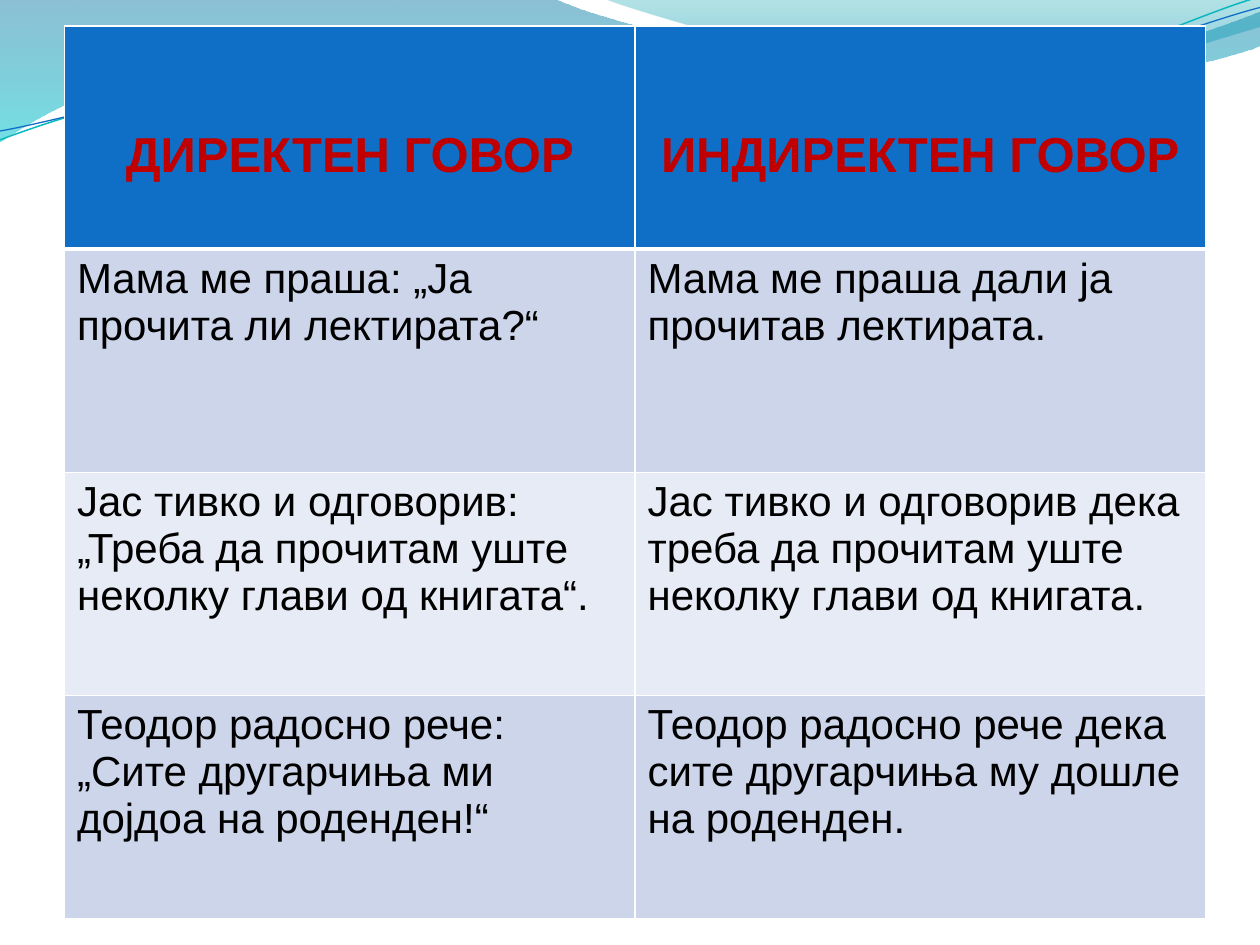
import math

import pptx
import pptx.dml.color
import pptx.enum.text
import pptx.oxml
import pptx.oxml.ns
import pptx.util
from lxml import etree

Cm = pptx.util.Cm
Pt = pptx.util.Pt
qn = pptx.oxml.ns.qn

COLORS = {
    "header": "0F6FC6",
    "header_text": "C00000",
    "text": "000000",
    "odd_row": "CCD5EA",
    "even_row": "E7EBF5",
    "border": "FFFFFF",
    "deep_blue": "0074A1",
    "cyan": "00C6CF",
    "teal": "00A1A9",
    "blue": "008BBF",
    "teal_line": "0AB8BF",
}
FONT = "Arial"
CM_PER_INCH = 2.54
LINE_TILT = -2.7

ROWS = [
    ("ДИРЕКТЕН ГОВОР", "ИНДИРЕКТЕН ГОВОР"),
    ("Мама ме праша: „Ја прочита ли лектирата?“",
     "Мама ме праша дали ја прочитав лектирата."),
    ("Јас тивко и одговорив: „Треба да прочитам уште неколку глави од книгата“.",
     "Јас тивко и одговорив дека треба да прочитам уште неколку глави од книгата."),
    ("Теодор радосно рече: „Сите другарчиња ми дојдоа на роденден!“",
     "Теодор радосно рече дека сите другарчиња му дошле на роденден."),
]

# Outlines in inches: a pair is a straight step, a sextet a Bézier curve.
# Gradient stops: position in percent, colour, opacity in percent.
WAVES = [
    ([(0, 0), (4.4, -0.01), (4.76, 0.17, 6.64, 0.63, 7.58, 0.63),
      (8.53, 0.63, 9.58, 0.26, 10, 0.09), (10.01, 0.36),
      (9.83, 0.44, 8.7, 0.76, 7.46, 0.75), (6.22, 0.75, 3.82, 0.28, 2.57, 0.34),
      (1.29, 0.36, 0.46, 0.83, -0.01, 1.13), (0, 0)],
     [(0, "deep_blue", 45), (100, "cyan", 55)]),
    ([(4.79, -0.01), (5.09, 0.11, 6.82, 0.62, 7.69, 0.65),
      (8.56, 0.69, 9.61, 0.32, 10, 0.21), (10, 0), (4.79, -0.01)],
     [(0, "teal", 30), (80, "blue", 45)]),
]
# Outline, centre of rotation, colour, width.
WAVE_LINES = [
    ([(0, 1.11), (0.48, 0.93, 1.58, 0.57, 2.77, 0.52),
      (3.95, 0.47, 5.93, 0.89, 7.13, 0.8), (8.33, 0.71, 9.38, 0.15, 9.98, -0.02)],
     (4.99, 0.57), "teal_line", 0.85),
    ([(0, 1.04), (0.47, 0.96, 1.64, 0.61, 2.83, 0.56),
      (4.03, 0.51, 5.97, 0.84, 7.17, 0.75), (8.36, 0.67, 9.41, 0.21, 10, 0.06)],
     (5, 0.59), "header", 0.75),
]


def rgb(name):
    return pptx.dml.color.RGBColor.from_string(COLORS[name])


def turn(outline, center, degrees):
    """Rotate every point of an outline clockwise about the centre."""
    cosine, sine = math.cos(math.radians(degrees)), math.sin(math.radians(degrees))
    turned = []
    for step in outline:
        values = []
        for x, y in zip(step[::2], step[1::2]):
            dx, dy = x - center[0], y - center[1]
            values += [center[0] + dx * cosine - dy * sine,
                       center[1] + dx * sine + dy * cosine]
        turned.append(tuple(values))
    return turned


def add_outline(slide, outline, close):
    """Draw all points as straight steps, then join each curve's three into one."""
    points = [(Cm(x * CM_PER_INCH), Cm(y * CM_PER_INCH))
              for step in outline for x, y in zip(step[::2], step[1::2])]
    builder = slide.shapes.build_freeform(*points[0])
    builder.add_line_segments(points[1:], close=close)
    shape = builder.convert_to_shape()
    shape.shadow.inherit = False
    segments = iter(list(shape.element.iter(qn("a:lnTo"))))
    for step in outline[1:]:
        segment = next(segments)
        if len(step) == 6:
            curve = etree.Element(qn("a:cubicBezTo"))
            segment.addprevious(curve)
            for part in (segment, next(segments), next(segments)):
                curve.append(part[0])
                part.getparent().remove(part)
    return shape


def add_wave(slide, outline, stops):
    shape = add_outline(slide, outline, close=True)
    shape.line.fill.background()
    stop_xml = "".join(
        f'<a:gs pos="{position * 1000}"><a:srgbClr val="{COLORS[color]}">'
        f'<a:alpha val="{opacity * 1000}"/></a:srgbClr></a:gs>'
        for position, color, opacity in stops)
    gradient = pptx.oxml.parse_xml(
        f'<a:gradFill {pptx.oxml.ns.nsdecls("a")}><a:gsLst>{stop_xml}</a:gsLst>'
        '<a:lin ang="5400000" scaled="0"/></a:gradFill>')
    shape.element.spPr.find(qn("a:custGeom")).addnext(gradient)


def add_wave_line(slide, outline, center, color, width):
    shape = add_outline(slide, turn(outline, center, -LINE_TILT), close=False)
    shape.rotation = LINE_TILT
    shape.fill.background()
    shape.line.color.rgb = rgb(color)
    shape.line.width = Pt(width)


def move_to_layout(slide):
    """Make the decoration part of the layout, behind the slide's own content."""
    for shape in list(slide.shapes):
        shape.element.nvSpPr.cNvPr.set("id", str(shape.shape_id + 100))
        slide.slide_layout.shapes.element.append(shape.element)


def set_borders(cell, top, bottom):
    properties = cell._tc.get_or_add_tcPr()
    widths = {"lnL": 1, "lnR": 1, "lnT": top, "lnB": bottom}
    for index, (tag, width) in enumerate(widths.items()):
        border = etree.Element(qn(f"a:{tag}"), w=str(Pt(width)))
        fill = etree.SubElement(border, qn("a:solidFill"))
        etree.SubElement(fill, qn("a:srgbClr"), val=COLORS["border"])
        properties.insert(index, border)


def fill_cell(cell, text, fill, size, color, bold):
    cell.fill.solid()
    cell.fill.fore_color.rgb = rgb(fill)
    run = cell.text_frame.paragraphs[0].add_run()
    run.text = text
    run.font.name = FONT
    run.font.size = Pt(size)
    run.font.bold = bold
    run.font.color.rgb = rgb(color)


def format_header(cell):
    cell.vertical_anchor = pptx.enum.text.MSO_ANCHOR.MIDDLE
    cell.margin_top = Cm(0.86)
    cell.text_frame.paragraphs[0].alignment = pptx.enum.text.PP_ALIGN.CENTER


def add_speech_table(slide):
    frame = slide.shapes.add_table(
        len(ROWS), 2, Cm(1.3), Cm(0.52), Cm(23), Cm(18))
    for row_index, texts in enumerate(ROWS):
        for column_index, text in enumerate(texts):
            cell = frame.table.cell(row_index, column_index)
            if row_index == 0:
                fill_cell(cell, text, "header", 28, "header_text", True)
                format_header(cell)
            else:
                fill = "odd_row" if row_index % 2 else "even_row"
                fill_cell(cell, text, fill, 24, "text", False)
            set_borders(cell, top=3 if row_index == 1 else 1,
                        bottom=3 if row_index == 0 else 1)


def main():
    presentation = pptx.Presentation()
    presentation.slide_width = Cm(25.4)
    presentation.slide_height = Cm(19.05)
    slide = presentation.slides.add_slide(presentation.slide_layouts[6])
    for outline, stops in WAVES:
        add_wave(slide, outline, stops)
    for outline, center, color, width in WAVE_LINES:
        add_wave_line(slide, outline, center, color, width)
    move_to_layout(slide)
    add_speech_table(slide)
    presentation.save("out.pptx")


if __name__ == "__main__":
    main()
